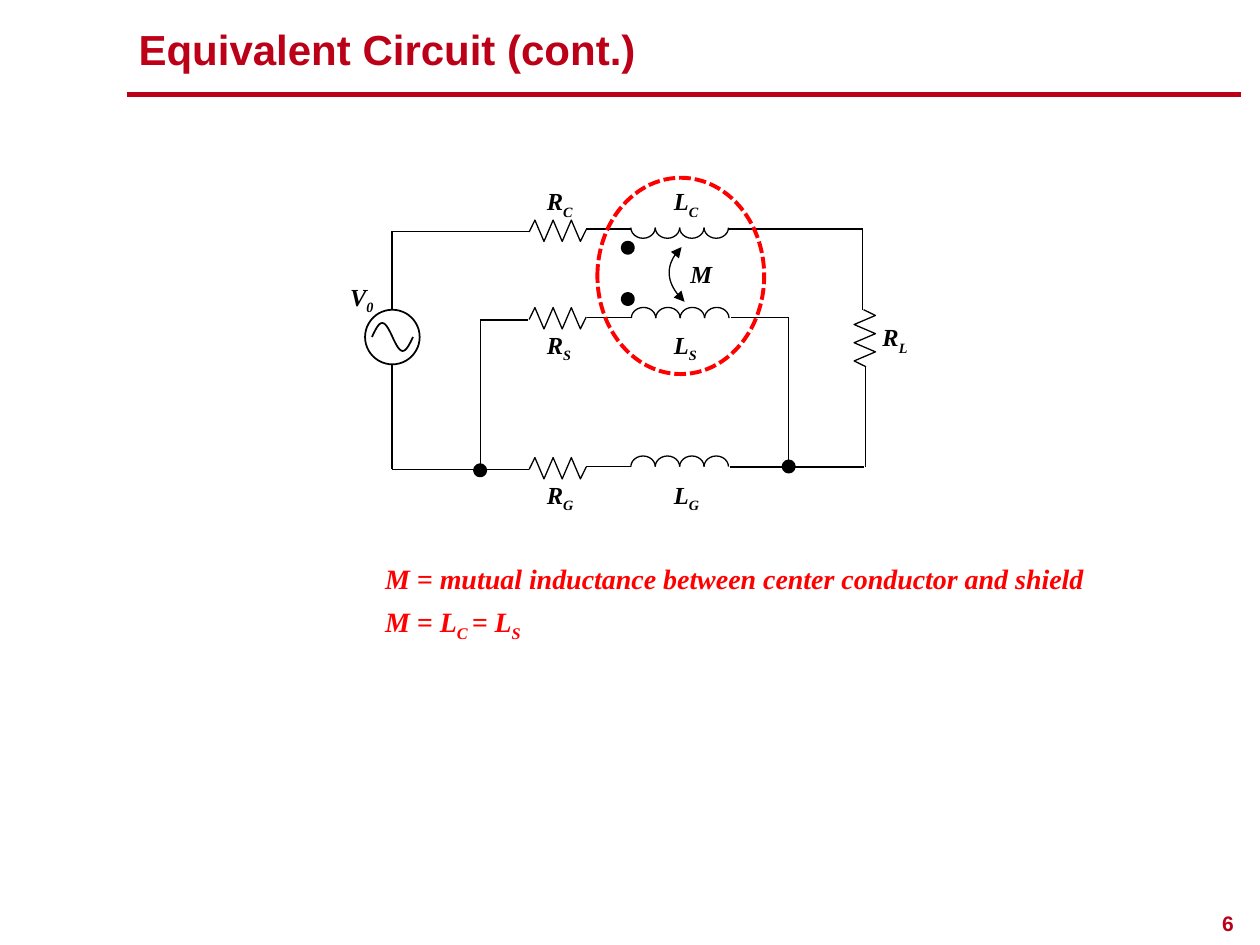
import math

from lxml import etree
from pptx import Presentation
from pptx.dml.color import RGBColor
from pptx.enum import dml, shapes, text
from pptx.oxml.ns import qn
from pptx.util import Pt

CRIMSON = RGBColor(0xBB, 0x00, 0x18)
BLACK = RGBColor(0, 0, 0)
WHITE = RGBColor(255, 255, 255)
RED = RGBColor(255, 0, 0)


class CircuitSlide:
    heading_font = "Arial"
    symbol_font = "Times New Roman"
    thin = 0.75

    def __init__(self, presentation):
        self.slide = presentation.slides.add_slide(presentation.slide_layouts[5])

    def style_font(self, font, name, size, color, italic=False):
        font.name, font.size, font.bold, font.italic = name, Pt(size), True, italic
        font.color.rgb = color

    def style_shape(self, shape, color, width, fill=None):
        shape.shadow.inherit = False
        shape.line.color.rgb = color
        shape.line.width = Pt(width)
        if fill is None:
            shape.fill.background()
        else:
            shape.fill.solid()
            shape.fill.fore_color.rgb = fill

    def title(self, wording, left, top, width, height):
        shape = self.slide.shapes.title
        shape.left, shape.top, shape.width, shape.height = map(Pt, (left, top, width, height))
        frame = shape.text_frame
        frame.text = wording
        frame.auto_size = text.MSO_AUTO_SIZE.NONE
        frame.vertical_anchor = text.MSO_ANCHOR.MIDDLE
        paragraph = frame.paragraphs[0]
        paragraph.alignment = text.PP_ALIGN.LEFT
        self.style_font(paragraph.runs[0].font, self.heading_font, 24, CRIMSON)

    def text_box(self, left, top, width, height):
        shape = self.slide.shapes.add_textbox(*map(Pt, (left, top, width, height)))
        shape.text_frame.word_wrap = False
        shape.text_frame.auto_size = text.MSO_AUTO_SIZE.SHAPE_TO_FIT_TEXT
        return shape.text_frame.paragraphs[0]

    def page_number(self, number, left, top, width, height):
        paragraph = self.text_box(left, top, width, height)
        paragraph.text = str(number)
        paragraph.alignment = text.PP_ALIGN.RIGHT
        paragraph.line_spacing = 0.9
        self.style_font(paragraph.runs[0].font, self.heading_font, 12, CRIMSON)

    def symbols(self, parts, left, top, width, height=24.5, size=14, color=BLACK):
        """Write parts that alternate between the baseline and subscript."""
        paragraph = self.text_box(left, top, width, height)
        for index, part in enumerate(parts):
            run = paragraph.add_run()
            run.text = part
            self.style_font(run.font, self.symbol_font, size, color, italic=True)
            if index % 2:
                run._r.get_or_add_rPr().set("baseline", "-25000")

    def wire(self, x1, y1, x2, y2, color=BLACK, width=thin):
        connector = self.slide.shapes.add_connector(
            shapes.MSO_CONNECTOR.STRAIGHT, *map(Pt, (x1, y1, x2, y2)))
        connector.line.color.rgb = color
        connector.line.width = Pt(width)
        etree.SubElement(connector._element.spPr, qn("a:effectLst"))

    def outline(self, points, width=thin):
        points = [(Pt(x), Pt(y)) for x, y in points]
        builder = self.slide.shapes.build_freeform(*points[0])
        builder.add_line_segments(points[1:], close=False)
        shape = builder.convert_to_shape()
        self.style_shape(shape, BLACK, width)
        return shape

    def resistor(self, left, top, vertical=False):
        """Draw a zigzag from a start point on its axis."""
        along = [0] + [3.3 + 5.2 * i for i in range(6)] + [32.6]
        across = [0.7] + [-6.1, 6.1] * 3 + [-0.7]
        if vertical:
            self.outline([(left - b, top + a) for a, b in zip(along, across)])
        else:
            self.outline([(left + a, top + b) for a, b in zip(along, across)])

    def inductor(self, left, top, downward=False):
        turn = 13.95
        for index in range(4):
            arc = self.slide.shapes.add_shape(
                shapes.MSO_SHAPE.ARC, Pt(left + index * turn), Pt(top), Pt(turn), Pt(12.2))
            # Arc angles are clockwise, in units of 100000/60000 degree
            arc.adjustments[0], arc.adjustments[1] = (0, 108) if downward else (108, 0)
            self.style_shape(arc, BLACK, self.thin)

    def ellipse(self, left, top, width, height, color=BLACK, line=1, fill=None):
        shape = self.slide.shapes.add_shape(
            shapes.MSO_SHAPE.OVAL, *map(Pt, (left, top, width, height)))
        self.style_shape(shape, color, line, fill)
        return shape

    def dot(self, x, y):
        self.ellipse(x - 2.5, y - 2.5, 5, 5, line=3, fill=BLACK)

    def source(self, x, y):
        self.ellipse(x - 15.6, y - 15.6, 31.2, 31.2, fill=WHITE)
        steps = 32
        self.outline([(x - 11.6 + 23.4 * i / steps, y - 8 * math.sin(2 * math.pi * i / steps))
                      for i in range(steps + 1)], width=1)

    def coupling_arrow(self, start, control, end):
        steps = 20
        curve = []
        for t in (i / steps for i in range(steps + 1)):
            curve.append([(1 - t) ** 2 * a + 2 * t * (1 - t) * b + t ** 2 * c
                          for a, b, c in zip(start, control, end)])
        line = self.outline(curve).line._get_or_add_ln()
        for tag in ("a:headEnd", "a:tailEnd"):
            etree.SubElement(line, qn(tag), type="triangle")


def main():
    presentation = Presentation()
    presentation.slide_width, presentation.slide_height = Pt(720), Pt(540)
    page = CircuitSlide(presentation)

    # Heading and page number
    page.wire(72.7, 54, 709.2, 54, CRIMSON, 3)
    page.title("Equivalent Circuit (cont.)", 72, 12.2, 571, 31.7)
    page.page_number(6, 682.6, 518.4, 29.5, 20.2)

    # Wires of the outer and inner loops
    for ends in (
        (302.4, 132.4, 224, 132.4), (224, 132, 224, 267.8), (302.4, 268.4, 224, 268.4),
        (334.8, 130.8, 360.4, 130.8), (416.4, 130.8, 493, 130.8), (493, 130.8, 493, 177),
        (494.5, 209.5, 494.5, 266.9), (416.9, 266.9, 494, 266.9), (334.8, 266.6, 360.4, 266.6),
        (302, 182.8, 274.4, 182.8), (274.4, 182.8, 274.4, 267.4),
        (335.3, 181.5, 360.7, 181.5), (417.5, 181.5, 450.7, 181.5), (450.7, 181.5, 450.7, 269),
    ):
        page.wire(*ends)

    # Resistors, inductors and voltage source
    for y in (131.9, 181.9, 267.6):
        page.resistor(302.4, y)
    page.resistor(494.2, 177, vertical=True)
    page.inductor(360.5, 124, downward=True)
    page.inductor(360.8, 175.7)
    page.inductor(360.5, 260.6)
    page.source(224.2, 192.6)

    # Junctions and polarity marks
    for point in ((450.7, 266.6), (274.4, 268.8), (358.8, 141.6), (358.8, 170.9)):
        page.dot(*point)

    # Mutual coupling
    page.coupling_arrow((391.2, 172.5), (374.5, 156.5), (389.5, 141.2))
    highlight = page.ellipse(341.4, 101.6, 95.3, 112.2, RED, 2.25)
    highlight.line.dash_style = dml.MSO_LINE.SQUARE_DOT

    # Component labels
    for subscript, top in (("C", 103), ("S", 185.2), ("G", 270.6)):
        page.symbols(["R", subscript], 305.4, top, 30.2)
        page.symbols(["L", subscript], 378, top, 29.5)
    page.symbols(["R", "L"], 497.2, 180.7, 29.5)
    page.symbols(["V", "0"], 193, 157.7, 28.8)
    page.symbols(["M"], 387.4, 144.7, 27.4)

    # Definitions of the mutual inductance
    page.symbols(["M = mutual inductance between center conductor and shield"],
                 213, 317.5, 419, 26.6, 16, RED)
    page.symbols(["M = L", "C ", "= L", "S"], 213, 342, 95, 26.6, 16, RED)

    presentation.save("out.pptx")


if __name__ == "__main__":
    main()
